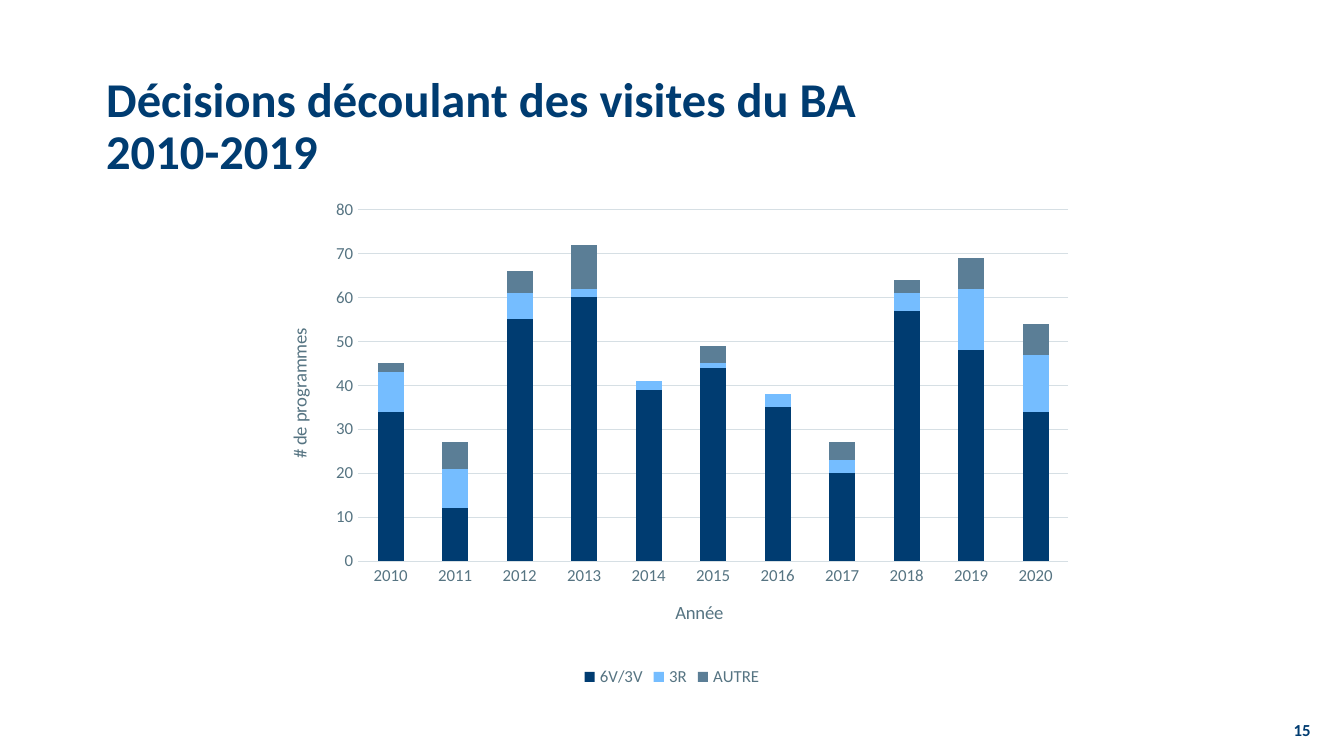
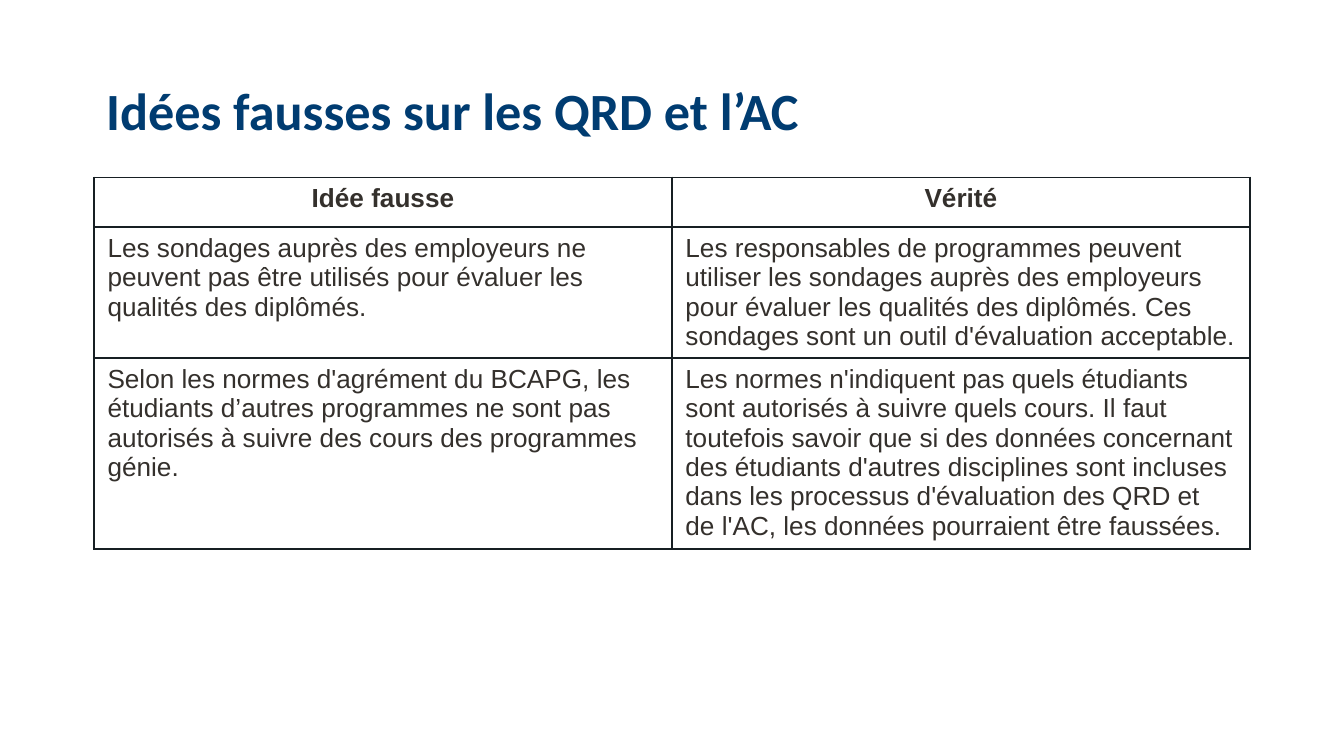
from typing import NamedTuple

from lxml import etree
from pptx import Presentation
from pptx import util as u
from pptx.chart import data as chart_data
from pptx.dml.color import RGBColor
from pptx.enum import chart as chart_enum
from pptx.enum import text
from pptx.oxml import ns

COLORS = {
    "navy": "003C71",
    "sky": "75BDFF",
    "slate": "5B7E96",
    "label": "567482",
    "grid": "D6DFE4",
    "ink": "171F23",
    "body": "34302C",
}
HEAD_FONT = "Calibri"
BODY_FONT = "Arial"
TITLE_ONLY = 5


class Box(NamedTuple):
    left: float
    top: float
    width: float
    height: float

    def lengths(self) -> list:
        return [u.Inches(value) for value in self]


class Series(NamedTuple):
    name: str
    color: str
    values: tuple


class Row(NamedTuple):
    height: float
    myth: str
    truth: str


TITLE_BOX = Box(0.69, 0.3, 8.62, 1.09)
NUMBER_BOX = Box(9.49, 5.35, 0.36, 0.16)
CHART_BOX = Box(1.93, 1.41, 6.14, 3.74)
TABLE_BOX = Box(0.7, 1.32, 8.6, 2.76)

YEARS = [str(year) for year in range(2010, 2021)]
DECISIONS = [
    Series("6V/3V", "navy", (34, 12, 55, 60, 39, 44, 35, 20, 57, 48, 34)),
    Series("3R", "sky", (9, 9, 6, 2, 2, 1, 3, 3, 4, 14, 13)),
    Series("AUTRE", "slate", (2, 6, 5, 10, 0, 4, 0, 4, 3, 7, 7)),
]
MYTHS = [
    Row(0.37, "Idée fausse", "Vérité"),
    Row(
        0.97,
        "Les sondages auprès des employeurs ne peuvent pas être utilisés pour "
        "évaluer les qualités des diplômés.",
        "Les responsables de programmes peuvent utiliser les sondages auprès des "
        "employeurs pour évaluer les qualités des diplômés. Ces sondages sont un "
        "outil d'évaluation acceptable.",
    ),
    Row(
        1.42,
        "Selon les normes d'agrément du BCAPG, les étudiants d’autres programmes "
        "ne sont pas autorisés à suivre des cours des programmes génie.",
        "Les normes n'indiquent pas quels étudiants sont autorisés à suivre quels "
        "cours. Il faut toutefois savoir que si des données concernant des "
        "étudiants d'autres disciplines sont incluses dans les processus "
        "d'évaluation des QRD et de l'AC, les données pourraient être faussées.",
    ),
]


def rgb(name: str) -> RGBColor:
    return RGBColor.from_string(COLORS[name])


def style_font(font, size: float, color: str, name: str = HEAD_FONT, bold: bool = False) -> None:
    font.name = name
    font.size = u.Pt(size)
    font.bold = bold
    font.color.rgb = rgb(color)


def write(frame, words: str, *, size: float, color: str, name: str = HEAD_FONT,
          bold: bool = False, align=text.PP_ALIGN.LEFT, spacing: float = 1.0) -> None:
    """Fill the first paragraph; a newline becomes a line break."""
    para = frame.paragraphs[0]
    para.alignment = align
    para.line_spacing = spacing
    for index, line in enumerate(words.split("\n")):
        if index:
            para.add_line_break()
        span = para.add_run()
        span.text = line
        style_font(span.font, size, color, name, bold)


def add_page(deck, title: str, size: float, anchor):
    page = deck.slides.add_slide(deck.slide_layouts[TITLE_ONLY])
    box = page.shapes.title
    box.left, box.top, box.width, box.height = TITLE_BOX.lengths()
    frame = box.text_frame
    frame.auto_size = text.MSO_AUTO_SIZE.NONE
    frame.word_wrap = True
    frame.vertical_anchor = anchor
    write(frame, title, size=size, color="navy", bold=True, spacing=0.9)
    return page


def add_page_number(page, number: str) -> None:
    frame = page.shapes.add_textbox(*NUMBER_BOX.lengths()).text_frame
    frame.margin_top = frame.margin_bottom = 0
    frame.word_wrap = True
    frame.vertical_anchor = text.MSO_ANCHOR.MIDDLE
    write(frame, number, size=9, color="navy", bold=True, align=text.PP_ALIGN.RIGHT)


def place(element, index: int, **fractions: float) -> None:
    """Fix a chart part at fractions of the chart's size."""
    for old in element.findall(ns.qn("c:layout")):
        element.remove(old)
    layout = etree.Element(ns.qn("c:layout"))
    element.insert(index, layout)
    manual = etree.SubElement(layout, ns.qn("c:manualLayout"))
    settings = {"xMode": "edge", "yMode": "edge", **fractions}
    if "w" in fractions:
        settings = {"layoutTarget": "inner", **settings}
    for key, value in settings.items():
        etree.SubElement(manual, ns.qn(f"c:{key}")).set("val", str(value))


def style_axis(axis, title: str, rotation: int, x: float, y: float) -> None:
    axis.major_tick_mark = axis.minor_tick_mark = chart_enum.XL_TICK_MARK.NONE
    style_font(axis.tick_labels.font, 9, "label")
    heading = axis.axis_title
    write(heading.text_frame, title, size=10, color="label", align=text.PP_ALIGN.CENTER)
    body = heading.element.find(".//" + ns.qn("a:bodyPr"))
    body.set("rot", str(rotation * 60000))
    body.set("vert", "horz")
    place(heading.element, 1, x=x, y=y)


def style_line(line) -> None:
    line.color.rgb = rgb("grid")
    line.width = u.Pt(0.75)


def add_decisions_chart(page) -> None:
    data = chart_data.CategoryChartData()
    data.categories = YEARS
    for series in DECISIONS:
        data.add_series(series.name, series.values)
    chart = page.shapes.add_chart(
        chart_enum.XL_CHART_TYPE.COLUMN_STACKED, *CHART_BOX.lengths(), data).chart
    style_font(chart.font, 10, "ink")
    chart.has_title = False
    chart.has_legend = True
    chart.legend.position = chart_enum.XL_LEGEND_POSITION.BOTTOM
    chart.legend.include_in_layout = False
    style_font(chart.legend.font, 9, "label")

    plot = chart.plots[0]
    plot.gap_width, plot.overlap = 150, 100
    plot.vary_by_categories = False
    for bars, series in zip(plot.series, DECISIONS):
        bars.format.fill.solid()
        bars.format.fill.fore_color.rgb = rgb(series.color)

    style_axis(chart.category_axis, "Année", 0, x=0.5, y=0.81)
    style_line(chart.category_axis.format.line)
    values = chart.value_axis
    style_axis(values, "# de programmes", -90, x=0.03, y=0.27)
    values.minimum_scale, values.maximum_scale, values.major_unit = 0, 80, 10
    values.format.line.fill.background()
    style_line(values.major_gridlines.format.line)
    place(chart.element.find(".//" + ns.qn("c:plotArea")), 0, x=0.12, y=0.04, w=0.86, h=0.7)


def add_borders(cell, color: str, width: float) -> None:
    properties = cell._tc.get_or_add_tcPr()
    for side in "LRTB":
        line = etree.SubElement(properties, ns.qn(f"a:ln{side}"), w=str(u.Pt(width)))
        fill = etree.SubElement(line, ns.qn("a:solidFill"))
        etree.SubElement(fill, ns.qn("a:srgbClr"), val=COLORS[color])


def add_myths_table(page) -> None:
    table = page.shapes.add_table(len(MYTHS), 2, *TABLE_BOX.lengths()).table
    table.first_row = table.horz_banding = False
    for column in table.columns:
        column.width = u.Inches(TABLE_BOX.width / 2)
    for index, row in enumerate(MYTHS):
        table.rows[index].height = u.Inches(row.height)
        header = index == 0
        align = text.PP_ALIGN.CENTER if header else text.PP_ALIGN.LEFT
        for cell, words in zip(table.rows[index].cells, (row.myth, row.truth)):
            write(cell.text_frame, words, size=14, color="body", name=BODY_FONT,
                  bold=header, align=align)
            add_borders(cell, "ink", 1)
            cell.fill.background()


def main() -> None:
    deck = Presentation()
    deck.slide_width = u.Inches(10)
    deck.slide_height = deck.slide_width * 9 // 16

    page = add_page(deck, "Décisions découlant des visites du BA\n2010-2019", 26,
                    text.MSO_ANCHOR.BOTTOM)
    add_decisions_chart(page)
    add_page_number(page, "15")

    page = add_page(deck, "Idées fausses sur les QRD et l’AC", 28, text.MSO_ANCHOR.MIDDLE)
    add_myths_table(page)

    deck.save("out.pptx")


if __name__ == "__main__":
    main()
